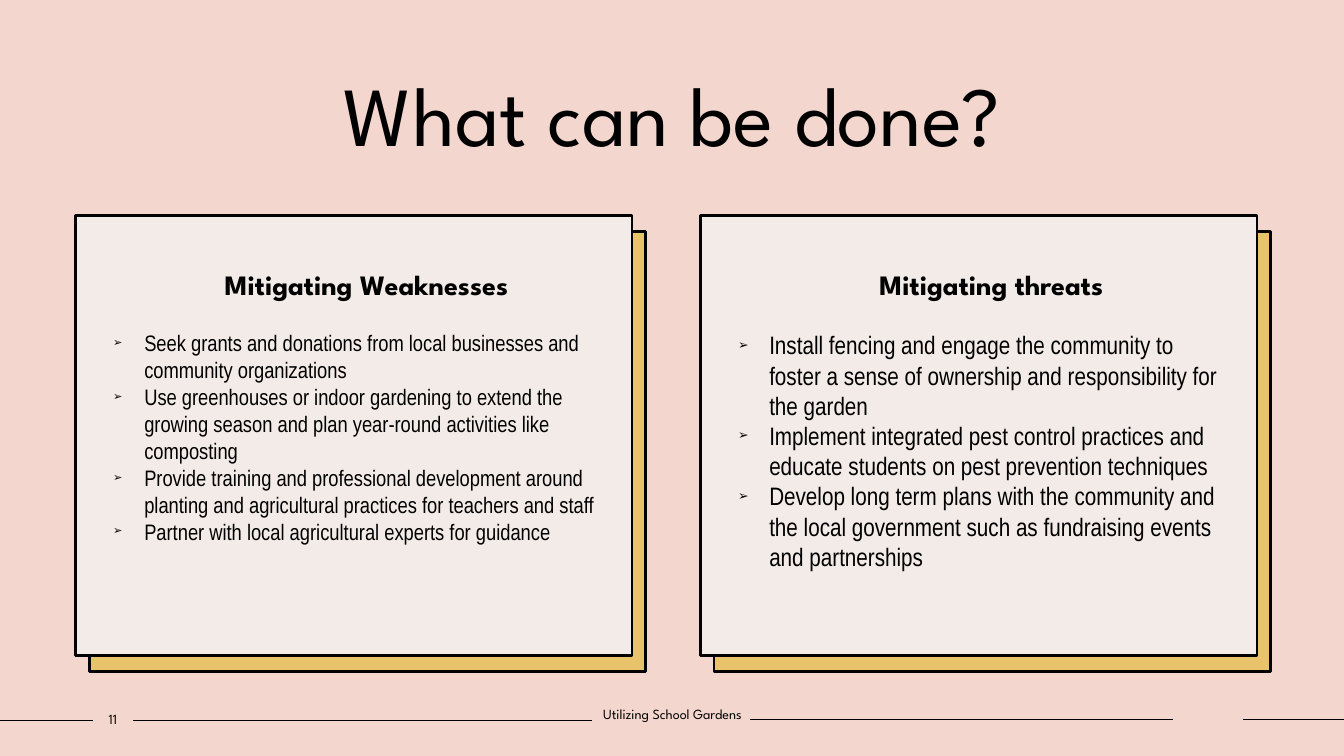
from dataclasses import dataclass

from lxml.etree import SubElement
from pptx import Presentation
from pptx.dml.color import RGBColor as RGB
from pptx.enum.shapes import MSO_CONNECTOR as Connector, MSO_SHAPE as Shape
from pptx.enum.text import MSO_ANCHOR as Anchor, MSO_AUTO_SIZE as Fit, PP_ALIGN as Align
from pptx.oxml.ns import qn
from pptx.util import Inches, Pt


@dataclass(frozen=True)
class Theme:
    page: str = "F3D6CD"
    card: str = "F3EBE8"
    backing: str = "E9C369"
    ink: str = "000000"
    display: str = "League Spartan"
    text: str = "Arial Narrow"
    title: int = 60
    heading: int = 20
    small: int = 10
    border: int = 2
    rule: int = 1


THEME = Theme()
WIDTH, HEIGHT = Inches(13.33), Inches(7.5)
COL, ROW = WIDTH / 100, HEIGHT / 100
COMPARISON_LAYOUT = 4

CARD_LEFT, CARD_TOP, CARD_STEP = 5.63, 28.53, 46.5
CARD_WIDTH, CARD_HEIGHT = 41.4, 58.13
FOOTER_TOP, FOOTER_HEIGHT = 93.33, 3.6
RULES = [(0, 6.9, 95.33), (9.9, 44.03, 95.33), (55.8, 87.3, 95.2), (92.5, 100, 95.2)]

CARDS = [
    ("Mitigating Weaknesses", 16, [
        "Seek grants and donations from local businesses and community organizations",
        "Use greenhouses or indoor gardening to extend the growing season and plan "
        "year-round activities like composting",
        "Provide training and professional development around planting and "
        "agricultural practices for teachers and staff",
        "Partner with local agricultural experts for guidance",
    ]),
    ("Mitigating threats", 18, [
        "Install fencing and engage the community to foster a sense of ownership "
        "and responsibility for the garden",
        "Implement integrated pest control practices and educate students on pest "
        "prevention techniques",
        "Develop long term plans with the community and the local government such "
        "as fundraising events and partnerships",
    ]),
]


def grid(left, top, width, height):
    return round(left * COL), round(top * ROW), round(width * COL), round(height * ROW)


def place(sp, *box):
    sp.left, sp.top, sp.width, sp.height = grid(*box)
    sp.element.getparent().append(sp.element)


def paint(sp, color):
    sp.fill.solid()
    sp.fill.fore_color.rgb = RGB.from_string(color)
    sp.line.color.rgb = RGB.from_string(THEME.ink)
    sp.line.width = Pt(THEME.border)


def add_bullet(p):
    pPr = p._p.get_or_add_pPr()
    pPr.set("marL", str(Inches(0.31)))
    pPr.set("indent", str(-Inches(0.31)))
    SubElement(pPr, qn("a:buSzPct"), val="50000")
    SubElement(pPr, qn("a:buChar"), char="➢")


def write(sp, *lines, size, font=THEME.display, bold=False, align=Align.CENTER,
          anchor=Anchor.TOP, insets=(0.1, 0.05, 0.1, 0.05), before=0, spacing=1.0,
          bullets=False):
    tf = sp.text_frame
    tf.word_wrap, tf.auto_size, tf.vertical_anchor = True, Fit.NONE, anchor
    tf.margin_left, tf.margin_top, tf.margin_right, tf.margin_bottom = map(Inches, insets)
    for i, line in enumerate(lines):
        p = tf.add_paragraph() if i else tf.paragraphs[0]
        p.alignment, p.line_spacing, p.space_before = align, spacing, Pt(before)
        if bullets:
            add_bullet(p)
        r = p.add_run()
        r.text = line
        r.font.name, r.font.size, r.font.bold = font, Pt(size), bold
        r.font.color.rgb = RGB.from_string(THEME.ink)


def add_rule(s, start, end, y):
    line = s.shapes.add_connector(Connector.STRAIGHT, *grid(start, y, end, y))
    line.line.color.rgb = RGB.from_string(THEME.ink)
    line.line.width = Pt(THEME.rule)
    SubElement(line.element.spPr, qn("a:effectLst"))


def add_backing(s, left):
    sp = s.shapes.add_shape(Shape.RECTANGLE,
                            *grid(left + 1, CARD_TOP + 2.13, CARD_WIDTH, CARD_HEIGHT))
    sp.shadow.inherit = False
    paint(sp, THEME.backing)


def fill_card(heading, body, left, title, size, items):
    place(heading, left, CARD_TOP, CARD_WIDTH, CARD_HEIGHT)
    paint(heading, THEME.card)
    write(heading, title, size=THEME.heading, bold=True, before=10, spacing=0.9,
          insets=(0.35, 0.55, 0.1, 0.05))
    place(body, left + 2.03, CARD_TOP + 14.4, 37.8, 40.67)
    write(body, *items, size=size, font=THEME.text, align=Align.LEFT, bullets=True)


def add_footer(s, text, left, width, **style):
    sp = s.shapes.add_textbox(*grid(left, FOOTER_TOP, width, FOOTER_HEIGHT))
    write(sp, text, size=THEME.small, insets=(0, 0, 0, 0), **style)


def main():
    prs = Presentation()
    prs.slide_width, prs.slide_height = WIDTH, HEIGHT
    s = prs.slides.add_slide(prs.slide_layouts[COMPARISON_LAYOUT])
    s.background.fill.solid()
    s.background.fill.fore_color.rgb = RGB.from_string(THEME.page)
    title, *bodies = list(s.placeholders)
    lefts = [CARD_LEFT + i * CARD_STEP for i in range(len(CARDS))]

    for rule in RULES:
        add_rule(s, *rule)
    for left in lefts:
        add_backing(s, left)
    place(title, 9.38, 7.47, 81.3, 14.8)
    write(title, "What can be done?", size=THEME.title, anchor=Anchor.BOTTOM)
    for heading, body, left, card in zip(bodies[::2], bodies[1::2], lefts, CARDS):
        fill_card(heading, body, left, *card)
    add_footer(s, "11", 6.9, 3, anchor=Anchor.MIDDLE)
    add_footer(s, "Utilizing School Gardens", 44.03, 12)
    prs.save("out.pptx")


if __name__ == "__main__":
    main()
